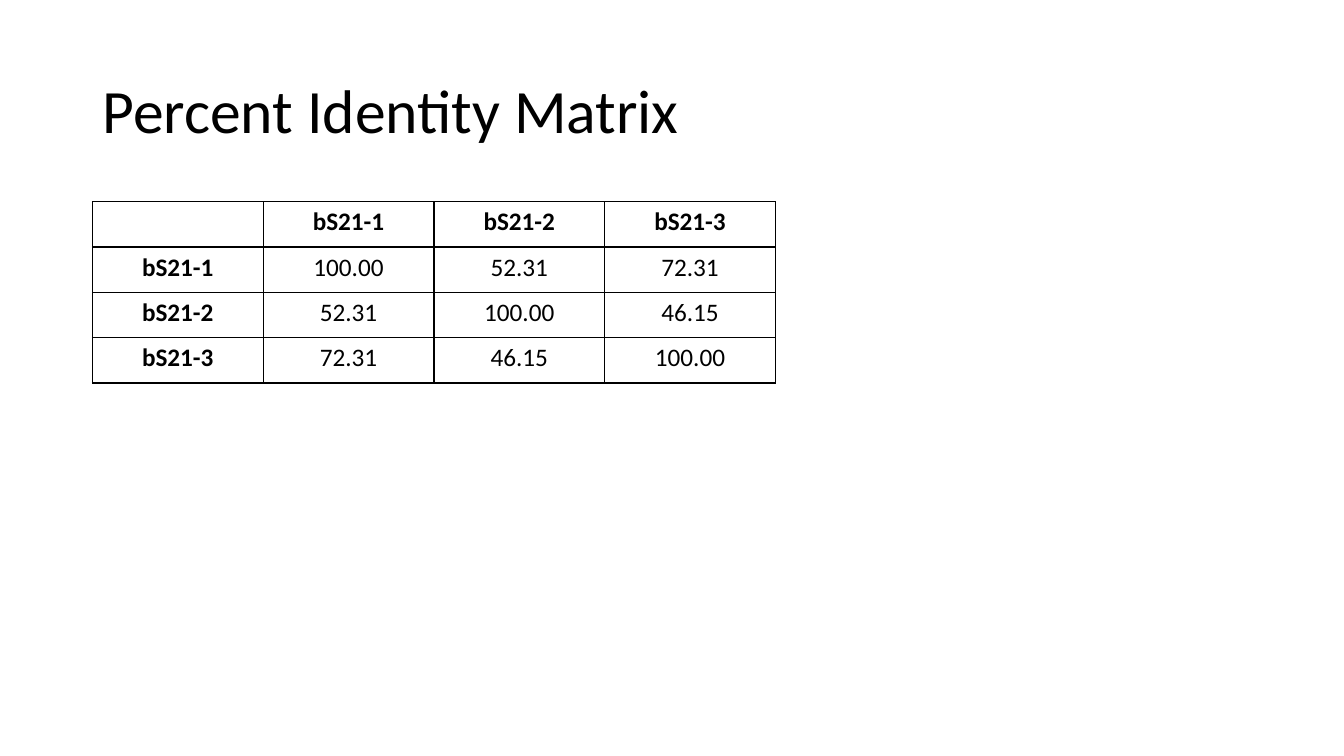
from lxml.etree import SubElement
from pptx import Presentation
from pptx.dml.color import RGBColor
from pptx.enum.text import MSO_ANCHOR as ANCHOR, PP_ALIGN as ALIGN
from pptx.oxml.ns import qn
from pptx.util import Pt


def rgb(hex_color):
    return RGBColor.from_string(hex_color)


def write(tf, text, size=18, bold=False, color="000000", font="Calibri",
          align=ALIGN.LEFT, spacing=None):
    p = tf.paragraphs[0]
    p.alignment = align
    p.line_spacing = spacing
    r = p.add_run()
    r.text = text
    r.font.name, r.font.size, r.font.bold = font, Pt(size), bold
    r.font.color.rgb = rgb(color)


class SlideBuilder:
    line_color = "000000"
    line_width = 1

    def __init__(self, prs):
        self.s = prs.slides.add_slide(prs.slide_layouts[5])

    def title(self, text, x, y, w, h):
        sp = self.s.shapes.title
        sp.left, sp.top, sp.width, sp.height = Pt(x), Pt(y), Pt(w), Pt(h)
        tf = sp.text_frame
        tf.word_wrap = True
        tf.vertical_anchor = ANCHOR.MIDDLE
        write(tf, text, size=44, spacing=0.9)

    def borders(self, cell):
        tc_pr = cell._tc.get_or_add_tcPr()
        for side in ("lnL", "lnR", "lnT", "lnB"):
            ln = SubElement(tc_pr, qn(f"a:{side}"), w=str(Pt(self.line_width)))
            fill = SubElement(ln, qn("a:solidFill"))
            SubElement(fill, qn("a:srgbClr"), val=self.line_color)

    def table(self, rows, x, y, col_w, row_h):
        n_rows, n_cols = len(rows), len(rows[0])
        table = self.s.shapes.add_table(n_rows, n_cols, Pt(x), Pt(y),
                                        Pt(col_w * n_cols), Pt(row_h * n_rows)).table
        table.horz_banding = table.first_row = False
        for col in table.columns:
            col.width = Pt(col_w)
        for i, row in enumerate(rows):
            table.rows[i].height = Pt(row_h)
            for j, text in enumerate(row):
                cell = table.cell(i, j)
                self.borders(cell)
                cell.fill.background()
                if text:
                    write(cell.text_frame, text, bold=i == 0 or j == 0,
                          align=ALIGN.CENTER)


def main():
    prs = Presentation()
    prs.slide_width, prs.slide_height = Pt(960), Pt(540)
    slide = SlideBuilder(prs)

    # Title
    slide.title("Percent Identity Matrix", 66, 28.75, 828, 104.4)

    # Identity matrix, with the protein names as row and column heads
    proteins = ["bS21-1", "bS21-2", "bS21-3"]
    identities = [
        ["100.00", "52.31", "72.31"],
        ["52.31", "100.00", "46.15"],
        ["72.31", "46.15", "100.00"],
    ]
    rows = [[""] + proteins]
    rows += [[name] + values for name, values in zip(proteins, identities)]
    slide.table(rows, 66, 144, col_w=122, row_h=32.4)

    prs.save("out.pptx")


if __name__ == "__main__":
    main()
